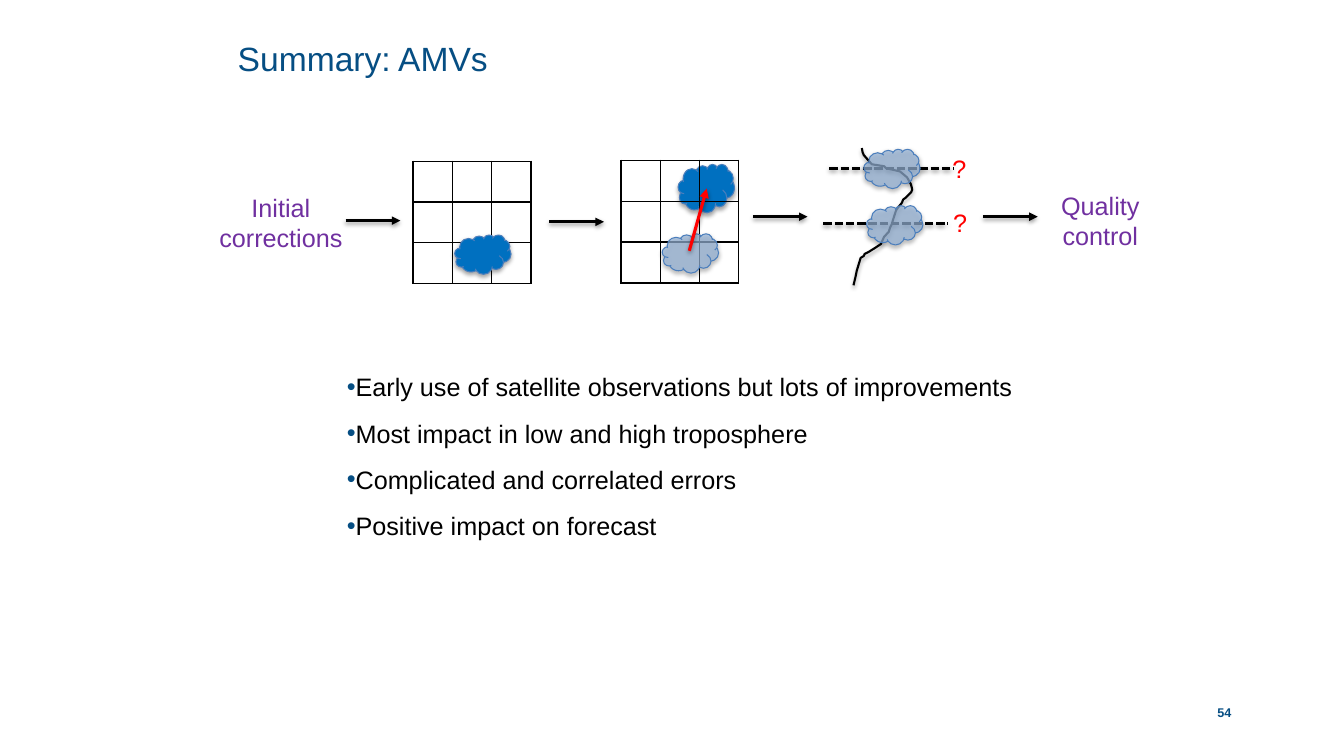
from dataclasses import dataclass

from lxml.etree import SubElement
from pptx import Presentation
from pptx.dml.color import RGBColor
from pptx.enum.dml import MSO_LINE
from pptx.enum.shapes import MSO_CONNECTOR, MSO_SHAPE
from pptx.enum.text import MSO_ANCHOR, MSO_AUTO_SIZE, PP_ALIGN
from pptx.oxml.ns import qn
from pptx.util import Cm, Pt

COLORS = {
    "navy": "064E83", "black": "000000", "purple": "7030A0", "red": "FF0000",
    "cloud": "0070C0", "faded": "95B3D7", "edge": "4B7EBC",
}
BULLETS = [
    "Early use of satellite observations but lots of improvements",
    "Most impact in low and high troposphere",
    "Complicated and correlated errors",
    "Positive impact on forecast",
]
WIND_PROFILE = [
    (2151, 719), (2156, 698), (2159, 683), (2169, 650), (2177, 645), (2179, 640),
    (2189, 635), (2197, 630), (2205, 625), (2220, 615), (2228, 597), (2240, 584),
    (2243, 574), (2248, 564), (2250, 556), (2258, 531), (2261, 526), (2273, 511),
    (2276, 503), (2283, 498), (2296, 485), (2299, 478), (2296, 465), (2286, 447),
    (2268, 432), (2233, 424), (2228, 419), (2197, 414), (2184, 399), (2177, 391),
    (2174, 384), (2172, 373),
]
CELL_W, CELL_H, GRID_SIZE = 0.99, 1.02, 3
ARROW_LEN, LEVEL_LEN = 1.38, 3.14


@dataclass
class Label:
    """Text box with one run; lengths in centimetres."""
    text: str
    x: float
    y: float
    w: float
    h: float
    color: str
    align: PP_ALIGN = PP_ALIGN.CENTER


@dataclass
class Cloud:
    """Cloud, solid or see-through."""
    x: float
    y: float
    h: float = 0.99
    faded: bool = True


@dataclass
class Line:
    """Straight line, with an arrowhead unless dashed."""
    x1: float
    y1: float
    x2: float
    y2: float
    color: str = "black"
    width: float = 2
    dashed: bool = False


def rgb(name: str) -> RGBColor:
    """Look up a colour by name."""
    return RGBColor.from_string(COLORS[name])


def place(s, x: float, y: float, w: float, h: float) -> None:
    """Move and size a shape."""
    s.left, s.top, s.width, s.height = Cm(x), Cm(y), Cm(w), Cm(h)


def add_run(p, text: str, size: float, color: str, bold: bool = False) -> None:
    """Append a formatted run to a paragraph."""
    r = p.add_run()
    r.text = text
    r.font.name, r.font.size, r.font.bold = "Arial", Pt(size), bold
    r.font.color.rgb = rgb(color)


def clear_frame(tf) -> None:
    """Set no margins, no resizing and wrapped text."""
    tf.margin_left = tf.margin_right = tf.margin_top = tf.margin_bottom = 0
    tf.auto_size, tf.word_wrap = MSO_AUTO_SIZE.NONE, True


def add_shadow(s, alpha: int, dist: float) -> None:
    """Give a shape a soft shadow falling downwards."""
    effects = SubElement(s._element.spPr, qn("a:effectLst"))
    shadow = SubElement(effects, qn("a:outerShdw"), blurRad=str(Pt(3.1)),
                        dist=str(Pt(dist)), dir="5400000", rotWithShape="0")
    color = SubElement(shadow, qn("a:srgbClr"), val=COLORS["black"])
    SubElement(color, qn("a:alpha"), val=str(alpha * 1000))


def add_label(shapes, label: Label) -> None:
    """Draw a label."""
    s = shapes.add_textbox(Cm(label.x), Cm(label.y), Cm(label.w), Cm(label.h))
    s.text_frame.word_wrap = True
    p = s.text_frame.paragraphs[0]
    p.alignment = label.align
    add_run(p, label.text, 18, label.color)


def add_grid(shapes, x: float, y: float) -> None:
    """Draw an empty pixel grid as a table."""
    table = shapes.add_table(GRID_SIZE, GRID_SIZE, Cm(x), Cm(y),
                             Cm(CELL_W * GRID_SIZE), Cm(CELL_H * GRID_SIZE)).table
    table.first_row = table.horz_banding = False
    for col in table.columns:
        col.width = Cm(CELL_W)
    for row in table.rows:
        row.height = Cm(CELL_H)
    for cell in table.iter_cells():
        tc_pr = cell._tc.get_or_add_tcPr()
        for side in ("a:lnL", "a:lnR", "a:lnT", "a:lnB"):
            ln = SubElement(tc_pr, qn(side), w=str(Pt(1)))
            SubElement(SubElement(ln, qn("a:solidFill")), qn("a:srgbClr"),
                       val=COLORS["black"])
        cell.fill.background()


def add_cloud(shapes, cloud: Cloud) -> None:
    """Draw a cloud."""
    s = shapes.add_shape(MSO_SHAPE.CLOUD, Cm(cloud.x), Cm(cloud.y), Cm(1.42), Cm(cloud.h))
    s.fill.solid()
    s.fill.fore_color.rgb = rgb("faded" if cloud.faded else "cloud")
    if cloud.faded:
        color = s._element.spPr.find(qn("a:solidFill")).find(qn("a:srgbClr"))
        SubElement(color, qn("a:alpha"), val="70000")
    s.line.color.rgb, s.line.width = rgb("edge"), Pt(0.75)
    add_shadow(s, 35, 1.8)


def add_line(shapes, line: Line) -> None:
    """Draw a dashed level or an arrow."""
    s = shapes.add_connector(MSO_CONNECTOR.STRAIGHT, Cm(line.x1), Cm(line.y1),
                             Cm(line.x2), Cm(line.y2))
    s.line.color.rgb, s.line.width = rgb(line.color), Pt(line.width)
    if line.dashed:
        s.line.dash_style = MSO_LINE.SQUARE_DOT
    else:
        SubElement(s._element.spPr.find(qn("a:ln")), qn("a:tailEnd"), type="triangle")
    add_shadow(s, 38, 1.6)


def add_profile(shapes) -> None:
    """Draw the wind profile."""
    builder = shapes.build_freeform(*WIND_PROFILE[0], scale=Cm(0.01))
    builder.add_line_segments(WIND_PROFILE[1:], close=False)
    s = builder.convert_to_shape()
    s.fill.background()
    s.line.color.rgb, s.line.width = rgb("black"), Pt(1.5)
    add_shadow(s, 35, 1.8)


def add_texts(slide) -> None:
    """Fill the title, the list and the page number."""
    title, body = slide.placeholders
    place(title, 5.99, 0.99, 16.41, 1.02)
    place(body, 8.74, 9.35, 17.09, 7.39)
    for s in (title, body):
        clear_frame(s.text_frame)
        s.text_frame.vertical_anchor = MSO_ANCHOR.TOP
    p = title.text_frame.paragraphs[0]
    p.alignment, p.line_spacing = PP_ALIGN.LEFT, Pt(28)
    add_run(p, "Summary: AMVs", 24, "navy")
    tf = body.text_frame
    for i, text in enumerate(BULLETS):
        p = tf.add_paragraph() if i else tf.paragraphs[0]
        p_pr = p._p.get_or_add_pPr()
        p_pr.set("marL", "0")
        p_pr.set("indent", "0")
        SubElement(SubElement(p_pr, qn("a:buClr")), qn("a:srgbClr"), val=COLORS["navy"])
        SubElement(p_pr, qn("a:buFont"), typeface="Arial")
        SubElement(p_pr, qn("a:buChar"), char="•")
        p.line_spacing, p.space_before = Pt(22), Pt(11 if i else 0)
        add_run(p, text, 18, "black")
    tf = slide.shapes.add_textbox(Cm(27.86), Cm(17.53), Cm(5.99), Cm(0.61)).text_frame
    clear_frame(tf)
    tf.vertical_anchor = MSO_ANCHOR.BOTTOM
    tf.paragraphs[0].alignment = PP_ALIGN.CENTER
    add_run(tf.paragraphs[0], "54", 9, "navy", True)


def main() -> None:
    """Build and save the slide."""
    prs = Presentation()
    prs.slide_width, prs.slide_height = Cm(33.87), Cm(19.05)
    slide = prs.slides.add_slide(prs.slide_layouts[1])
    shapes = slide.shapes
    add_texts(slide)
    add_grid(shapes, 10.41, 4.06)
    for cloud in (Cloud(11.46, 5.92, faded=False), Cloud(17.09, 4.14, 1.22, False)):
        add_cloud(shapes, cloud)
    add_grid(shapes, 15.65, 4.04)
    add_cloud(shapes, Cloud(16.69, 5.89))
    add_line(shapes, Line(17.37, 6.32, 17.81, 4.75, "red", 2.25))
    for x, y in ((8.71, 5.56), (13.84, 5.59), (18.97, 5.46), (24.77, 5.46)):
        add_line(shapes, Line(x, y, x + ARROW_LEN, y))
    add_profile(shapes)
    for x, y in ((20.9, 4.24), (20.75, 5.64)):
        add_line(shapes, Line(x, y, x + LEVEL_LEN, y, dashed=True))
    for cloud in (Cloud(21.84, 5.18), Cloud(21.77, 3.76)):
        add_cloud(shapes, cloud)
    for label in (Label("Initial corrections", 5.11, 4.72, 3.94, 1.8, "purple"),
                  Label("?", 23.75, 3.73, 0.86, 1.02, "red", PP_ALIGN.LEFT),
                  Label("?", 23.77, 5.11, 0.86, 1.02, "red", PP_ALIGN.LEFT),
                  Label("Quality control", 25.76, 4.67, 3.94, 1.8, "purple")):
        add_label(shapes, label)
    prs.save("out.pptx")


if __name__ == "__main__":
    main()
